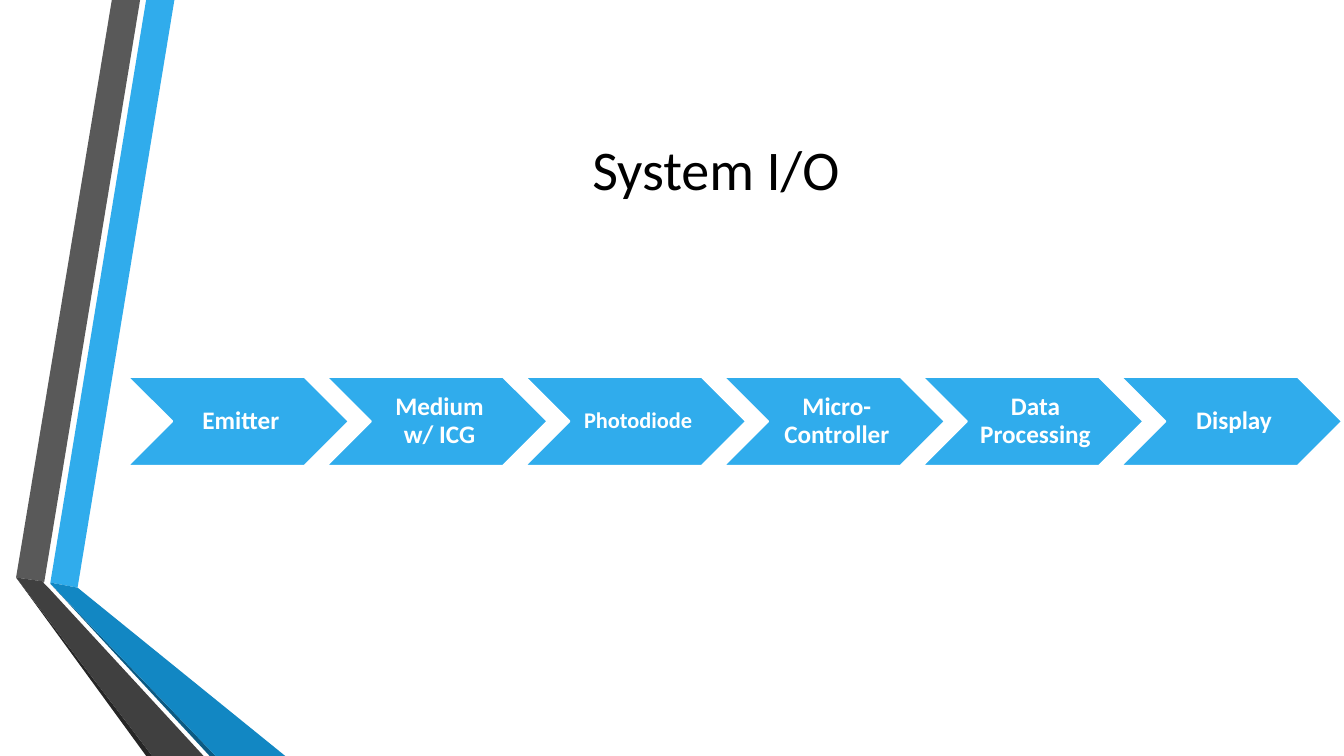
"""Build the System I/O slide: a folded ribbon, a title and a chain of chevrons."""
import pptx
import pptx.dml.color
import pptx.enum.shapes
import pptx.enum.text
import pptx.util

Inches = pptx.util.Inches
Pt = pptx.util.Pt

SKY = "30ACEC"
WHITE = "FFFFFF"
RIBBON_FOLDS = [
    (SKY, [(0.5, 5.78), (0.77, 5.83), (1.73, 0), (1.45, 0)]),
    ("595959", [(1.39, 0), (1.11, 0), (0.16, 5.73), (0.44, 5.77)]),
    ("262626", [(0.16, 5.73), (1.45, 7.5), (1.51, 7.5)]),
    ("0C5A82", [(0.5, 5.79), (2.08, 7.5), (2.14, 7.5)]),
    ("1287C3", [(0.5, 5.79), (2.14, 7.5), (2.83, 7.5), (0.77, 5.83), (0.5, 5.78)]),
    ("404040", [(2.02, 7.5), (0.48, 5.83), (0.43, 5.78), (0.44, 5.77),
                (0.16, 5.73), (1.51, 7.5)]),
]
STAGES = [("Emitter", 18), ("Medium w/ ICG", 18), ("Photodiode", 16),
          ("Micro-Controller", 18), ("Data Processing", 18), ("Display", 18)]


def rgb(code):
    """Turn a hex string into a colour."""
    return pptx.dml.color.RGBColor.from_string(code)


def apply(target, formats):
    """Set every attribute named in formats on the target."""
    for attribute, value in formats.items():
        setattr(target, attribute, value)


def paint(shape, fill):
    """Give a shape a solid fill and no shadow."""
    shape.shadow.inherit = False
    shape.fill.solid()
    shape.fill.fore_color.rgb = rgb(fill)


def write(shape, words, size, color, bold, insets):
    """Write one centred paragraph in the middle of a shape."""
    frame = shape.text_frame
    frame.text = words
    apply(frame, {
        "word_wrap": True,
        "auto_size": pptx.enum.text.MSO_AUTO_SIZE.NONE,
        "vertical_anchor": pptx.enum.text.MSO_ANCHOR.MIDDLE,
        **{f"margin_{side}": Inches(inset)
           for side, inset in zip(("left", "top", "right", "bottom"), insets)},
    })
    paragraph = frame.paragraphs[0]
    apply(paragraph, {"alignment": pptx.enum.text.PP_ALIGN.CENTER, "line_spacing": 0.9})
    font = paragraph.runs[0].font
    apply(font, {"name": "Calibri", "size": Pt(size), "bold": bold})
    font.color.rgb = rgb(color)


def add_ribbon(slide, left, top):
    """Draw the folded ribbon from the given corner."""
    for fill, corners in RIBBON_FOLDS:
        points = [(Inches(left + x), Inches(top + y)) for x, y in corners]
        outline = slide.shapes.build_freeform(*points[0])
        outline.add_line_segments(points[1:], close=True)
        fold = outline.convert_to_shape()
        paint(fold, fill)
        fold.line.fill.background()


def add_title(slide, left, top, width, height):
    """Place and format the title."""
    title = slide.shapes.title
    apply(title, {"left": Inches(left), "top": Inches(top),
                  "width": Inches(width), "height": Inches(height)})
    write(title, "System I/O", 40, "000000", False, (0.1, 0.05, 0.1, 0.05))


def add_stages(slide, left, top, width, height):
    """Spread the chevrons over the box, each a tenth over the next."""
    stage_width = width / (1 + 0.9 * (len(STAGES) - 1))
    for index, (words, size) in enumerate(STAGES):
        stage = slide.shapes.add_shape(
            pptx.enum.shapes.MSO_SHAPE.CHEVRON,
            Inches(left + 0.9 * stage_width * index), Inches(top),
            Inches(stage_width), Inches(height))
        paint(stage, SKY)
        stage.line.color.rgb = rgb(WHITE)
        stage.line.width = Pt(1.25)
        inset = 0.03 if size == 18 else 0.02
        write(stage, words, size, WHITE, True, (inset + 0.05, inset, inset, inset))


def main():
    """Build and save the slide."""
    deck = pptx.Presentation()
    apply(deck, {"slide_width": Inches(13.33), "slide_height": Inches(7.5)})
    slide = deck.slides.add_slide(deck.slide_layouts.get_by_name("Title Only"))
    add_ribbon(slide, 0, 0)
    add_title(slide, 1.62, 0.75, 10.96, 1.92)
    add_stages(slide, 1.27, 3.74, 12.04, 0.88)
    deck.save("out.pptx")


if __name__ == "__main__":
    main()
